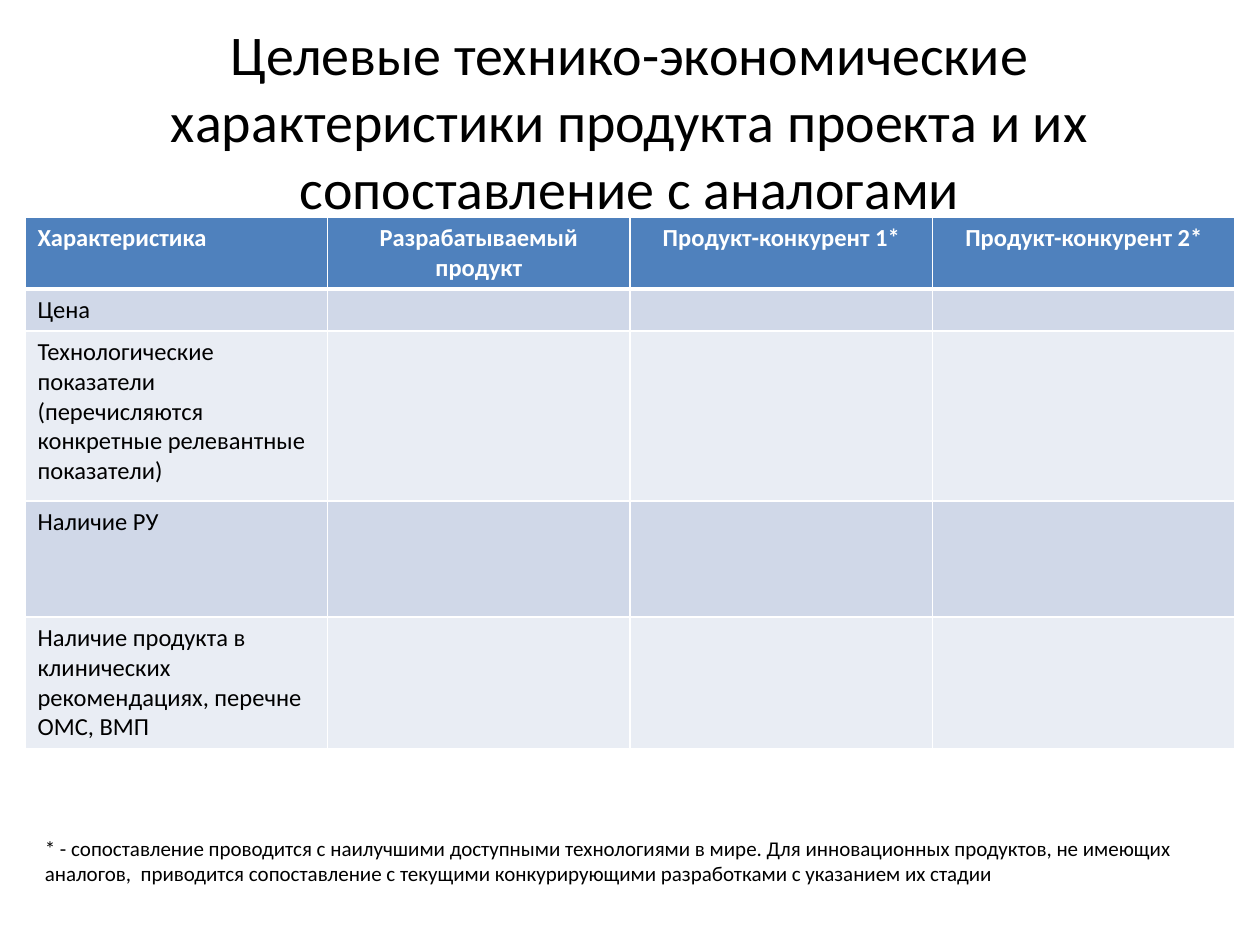
from dataclasses import dataclass

from pptx import Presentation
from pptx.dml.color import RGBColor
from pptx.enum.text import MSO_ANCHOR, PP_ALIGN
from pptx.oxml import parse_xml
from pptx.oxml.ns import nsdecls
from pptx.util import Pt

LEFT, CENTER = PP_ALIGN.LEFT, PP_ALIGN.CENTER
TOP, MIDDLE = MSO_ANCHOR.TOP, MSO_ANCHOR.MIDDLE
FACE = "Calibri"
COLORS = {
    "text": "000000",
    "white": "FFFFFF",
    "head": "4F81BD",
    "dark": "D0D8E8",
    "light": "E9EDF4",
}


@dataclass
class Style:
    size: float
    color: str = "text"
    bold: bool = False
    align: PP_ALIGN = LEFT


@dataclass
class Note:
    text: str
    box: tuple[float, float, float, float]
    style: Style
    anchor: MSO_ANCHOR = TOP


@dataclass
class Row:
    label: str
    height: float


NOTES = [
    Note("Целевые технико-экономические характеристики продукта проекта "
         "и их сопоставление с аналогами",
         (36, 23.5, 648, 90), Style(32, align=CENTER), MIDDLE),
    Note("* - сопоставление проводится с наилучшими доступными технологиями "
         "в мире. Для инновационных продуктов, не имеющих аналогов,  "
         "приводится сопоставление с текущими конкурирующими разработками "
         "с указанием их стадии",
         (18.5, 474, 701.5, 36), Style(12)),
]
HEADS = ["Характеристика", "Разрабатываемый продукт",
         "Продукт-конкурент 1*", "Продукт-конкурент 2*"]
HEAD_H = 40.5
ROWS = [
    Row("Цена", 24),
    Row("Технологические показатели (перечисляются конкретные "
        "релевантные показатели)", 97.2),
    Row("Наличие РУ", 66.2),
    Row("Наличие продукта в клинических рекомендациях, перечне ОМС, ВМП",
        75.5),
]
GRID_X, GRID_Y, COL_W = 14.3, 124.2, 172.9


def rgb(name: str) -> RGBColor:
    return RGBColor.from_string(COLORS[name])


def write(frame, text: str, style: Style) -> None:
    para = frame.paragraphs[0]
    para.text = text
    para.alignment = style.align
    font = para.font
    font.name, font.size, font.bold = FACE, Pt(style.size), style.bold
    font.color.rgb = rgb(style.color)


def add_note(slide, note: Note) -> None:
    frame = slide.shapes.add_textbox(*map(Pt, note.box)).text_frame
    frame.word_wrap = True
    frame.vertical_anchor = note.anchor
    write(frame, note.text, note.style)


def add_edges(cell, row: int) -> None:
    """Draw white borders, with a thick rule under the header row."""
    thick = {"T": row == 1, "B": row == 0}
    props = cell._tc.get_or_add_tcPr()
    for side in "LRTB":
        width = Pt(3 if thick.get(side) else 1)
        props.append(parse_xml(
            f'<a:ln{side} {nsdecls("a")} w="{width}"><a:solidFill>'
            f'<a:srgbClr val="{COLORS["white"]}"/></a:solidFill></a:ln{side}>'))


def add_grid(slide) -> None:
    heights = [HEAD_H] + [row.height for row in ROWS]
    blanks = [""] * (len(HEADS) - 1)
    texts = [HEADS] + [[row.label, *blanks] for row in ROWS]
    table = slide.shapes.add_table(
        len(texts), len(HEADS), Pt(GRID_X), Pt(GRID_Y),
        Pt(COL_W * len(HEADS)), Pt(sum(heights))).table
    table.horz_banding = False
    for col in table.columns:
        col.width = Pt(COL_W)
    for r, (line, height) in enumerate(zip(texts, heights)):
        table.rows[r].height = Pt(height)
        head = r == 0
        fill = "head" if head else ("light", "dark")[r % 2]
        for c, text in enumerate(line):
            cell = table.cell(r, c)
            add_edges(cell, r)
            cell.fill.solid()
            cell.fill.fore_color.rgb = rgb(fill)
            write(cell.text_frame, text,
                  Style(14, "white" if head else "text", head,
                        CENTER if head and c else LEFT))


def main() -> None:
    deck = Presentation()
    deck.slide_width, deck.slide_height = Pt(720), Pt(540)
    slide = deck.slides.add_slide(deck.slide_layouts[6])
    title, foot = NOTES
    add_note(slide, title)
    add_grid(slide)
    add_note(slide, foot)
    deck.save("out.pptx")


if __name__ == "__main__":
    main()
